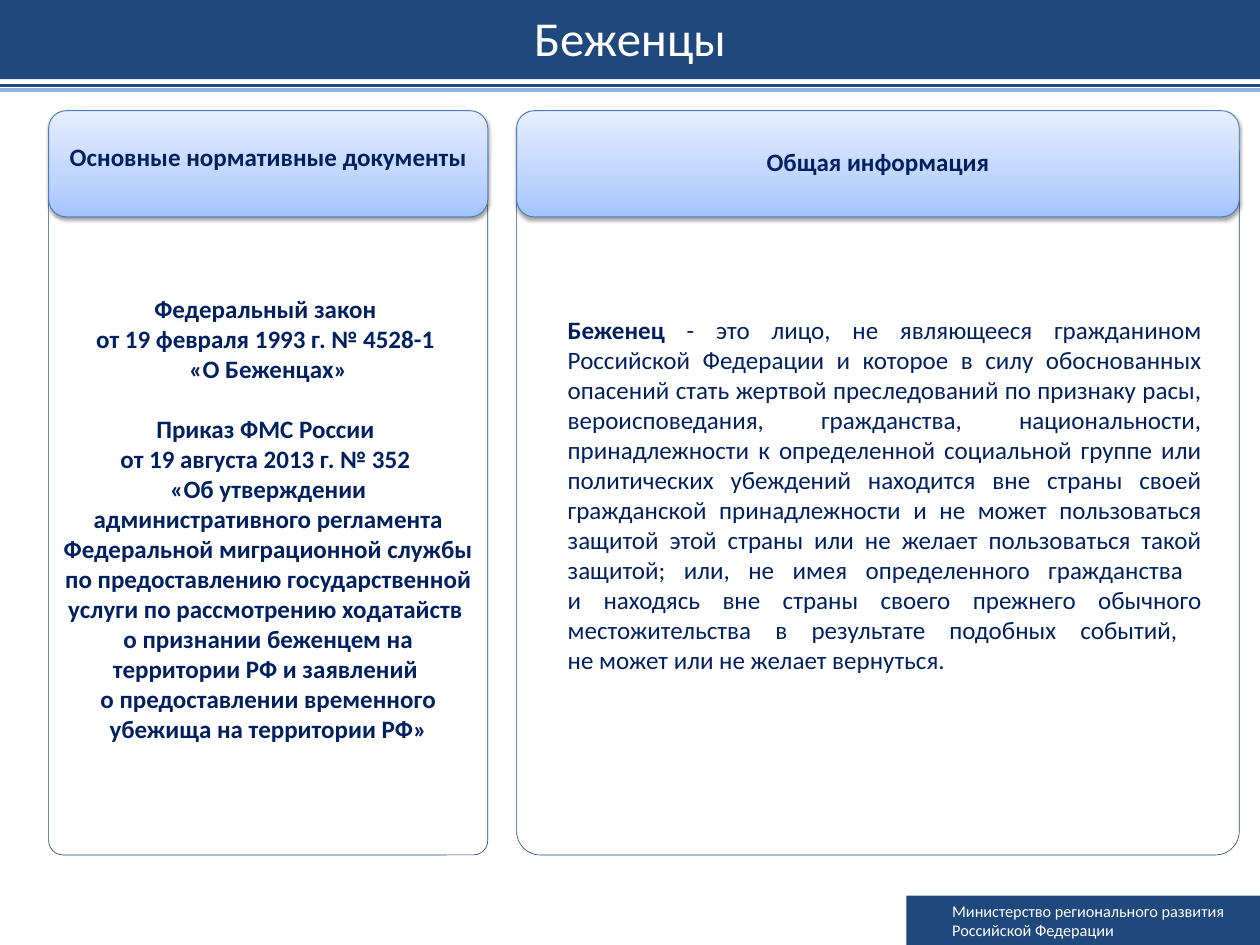
"""Build the slide on refugees: two headed cards, a title bar and a footer."""
from copy import deepcopy
from lxml import etree
from pptx import Presentation
from pptx import util as u
from pptx.dml.color import RGBColor
from pptx.enum import shapes, text
from pptx.oxml.ns import qn

COLORS = {"navy": "1F497D", "sky": "8EB4E3", "ink": "002060", "white": "FFFFFF",
          "edge": "4B7EBC", "low": "A4C4FF", "mid": "BFD4FF", "high": "E6EEFF"}
COLS, ROWS = 14, 10.5
CELL = u.Inches(1)
KIND = shapes.MSO_SHAPE
ALIGN = text.PP_ALIGN
ANCHOR = text.MSO_ANCHOR


def add_shape(kind, x, y, w, h, fill=None, line=None, width=0.5, adj=None):
    sp = s.shapes.add_shape(kind, *(int(n * CELL) for n in (x, y, w, h)))
    sp.shadow.inherit = False
    if adj is not None:
        sp.adjustments[0] = adj
    if fill:
        sp.fill.solid()
        sp.fill.fore_color.rgb = RGBColor.from_string(COLORS[fill])
    else:
        sp.fill.background()
    if line:
        sp.line.color.rgb = RGBColor.from_string(COLORS[line])
        sp.line.width = u.Pt(width)
    else:
        sp.line.fill.background()
    return sp


def add_text(sp, paragraphs, size=20, color="ink", bold=False, lead="", align=ALIGN.CENTER,
             anchor=ANCHOR.MIDDLE, spacing=None, before=(), left=0.1, right=0.1, top=0.05):
    tf = sp.text_frame
    tf.word_wrap = True
    tf.vertical_anchor = anchor
    tf.margin_left, tf.margin_right, tf.margin_top = (u.Inches(n) for n in (left, right, top))
    for i, words in enumerate(paragraphs):
        p = tf.paragraphs[0] if i == 0 else tf.add_paragraph()
        p.alignment = align
        if spacing:
            p.line_spacing = u.Pt(spacing)
        if i in before:
            p.space_before = u.Pt(24)
        if lead:
            p.add_run().text = lead
        for j, part in enumerate(words.split("\n")):
            if j:
                p.add_line_break()
            p.add_run().text = part
        p.font.size = u.Pt(size)
        for k, r in enumerate(p.runs):
            r.font.name = "Calibri"
            r.font.size = u.Pt(size)
            r.font.bold = bold or (bool(lead) and k == 0)
            r.font.color.rgb = RGBColor.from_string(COLORS[color])


prs = Presentation()
prs.slide_width, prs.slide_height = int(COLS * CELL), int(ROWS * CELL)
s = prs.slides.add_slide(prs.slide_layouts[6])

footer = add_shape(KIND.RECTANGLE, COLS - 3.93, ROWS - 0.55, 3.93, 0.55, fill="navy")
add_text(footer, ["Министерство регионального развития\nРоссийской Федерации"],
         size=13, color="white", align=ALIGN.LEFT, left=0.51, right=0)

for y, color in ((0.95, "navy"), (1, "sky")):
    rule = s.shapes.add_connector(shapes.MSO_CONNECTOR.STRAIGHT, 0, int(y * CELL),
                                  prs.slide_width, int(y * CELL))
    rule.line.color.rgb = RGBColor.from_string(COLORS[color])
    rule.line.width = u.Pt(3)
    etree.SubElement(rule._element.spPr, qn("a:effectLst"))

title = add_shape(KIND.ROUNDED_RECTANGLE, 0, 0, COLS, 0.88, fill="navy", adj=0)
add_text(title, ["Беженцы"], size=39, color="white", spacing=40.6, top=0.07)

cards = []
for x, w, top, bottom, heading, spacing in (
        (0.54, 4.88, 1.56, 9.5, "Основные нормативные документы", 13),
        (5.74, 8.03, 1.45, 9.5, "Общая информация", 19.6)):
    cards.append(add_shape(KIND.ROUNDED_RECTANGLE, x, top, w, bottom - top,
                           line="navy", adj=0.033))
    head = add_shape(KIND.ROUNDED_RECTANGLE, x, 1.23, w, 1.18, line="edge", width=0.75)
    head.fill.gradient()
    head.fill.gradient_angle = 90
    stops = head.fill._fill._gradFill.find(qn("a:gsLst"))
    stops.insert(1, deepcopy(stops[0]))
    for stop, color, place in zip(head.fill.gradient_stops, ("low", "mid", "high"), (0, 0.35, 1)):
        stop.color.rgb = RGBColor.from_string(COLORS[color])
        stop.position = place
    effects = head._element.spPr.find(qn("a:effectLst"))
    shadow = etree.SubElement(effects, qn("a:outerShdw"), blurRad=str(u.Pt(3.1)),
                              dist=str(u.Pt(1.6)), dir="5400000", rotWithShape="0")
    tint = etree.SubElement(shadow, qn("a:srgbClr"), val="000000")
    etree.SubElement(tint, qn("a:alpha"), val="38000")
    add_text(head, [heading], bold=True, spacing=spacing, left=0, right=0)

add_text(cards[0], [
    "Федеральный закон ",
    "от 19 февраля 1993 г. № 4528-1 ",
    "«О Беженцах»",
    "Приказ ФМС России ",
    "от 19 августа 2013 г. № 352 ",
    "«Об утверждении административного регламента Федеральной миграционной службы "
    "по предоставлению государственной услуги по рассмотрению ходатайств \n"
    "о признании беженцем на территории РФ и заявлений \n"
    "о предоставлении временного убежища на территории РФ»",
], bold=True, anchor=ANCHOR.TOP, before=(3,), top=1.65)

body = s.shapes.add_textbox(*(int(n * CELL) for n in (6.21, 3.44, 7.24, 4.29)))
add_text(body, [
    " - это лицо, не являющееся гражданином Российской Федерации и которое в силу "
    "обоснованных опасений стать жертвой преследований по признаку расы, вероисповедания, "
    "гражданства, национальности, принадлежности к определенной социальной группе или "
    "политических убеждений находится вне страны своей гражданской принадлежности и не может "
    "пользоваться защитой этой страны или не желает пользоваться такой защитой; или, не имея "
    "определенного гражданства \nи находясь вне страны своего прежнего обычного "
    "местожительства в результате подобных событий, \nне может или не желает вернуться.",
], lead="Беженец", align=ALIGN.JUSTIFY, anchor=ANCHOR.TOP)

prs.save("out.pptx")
